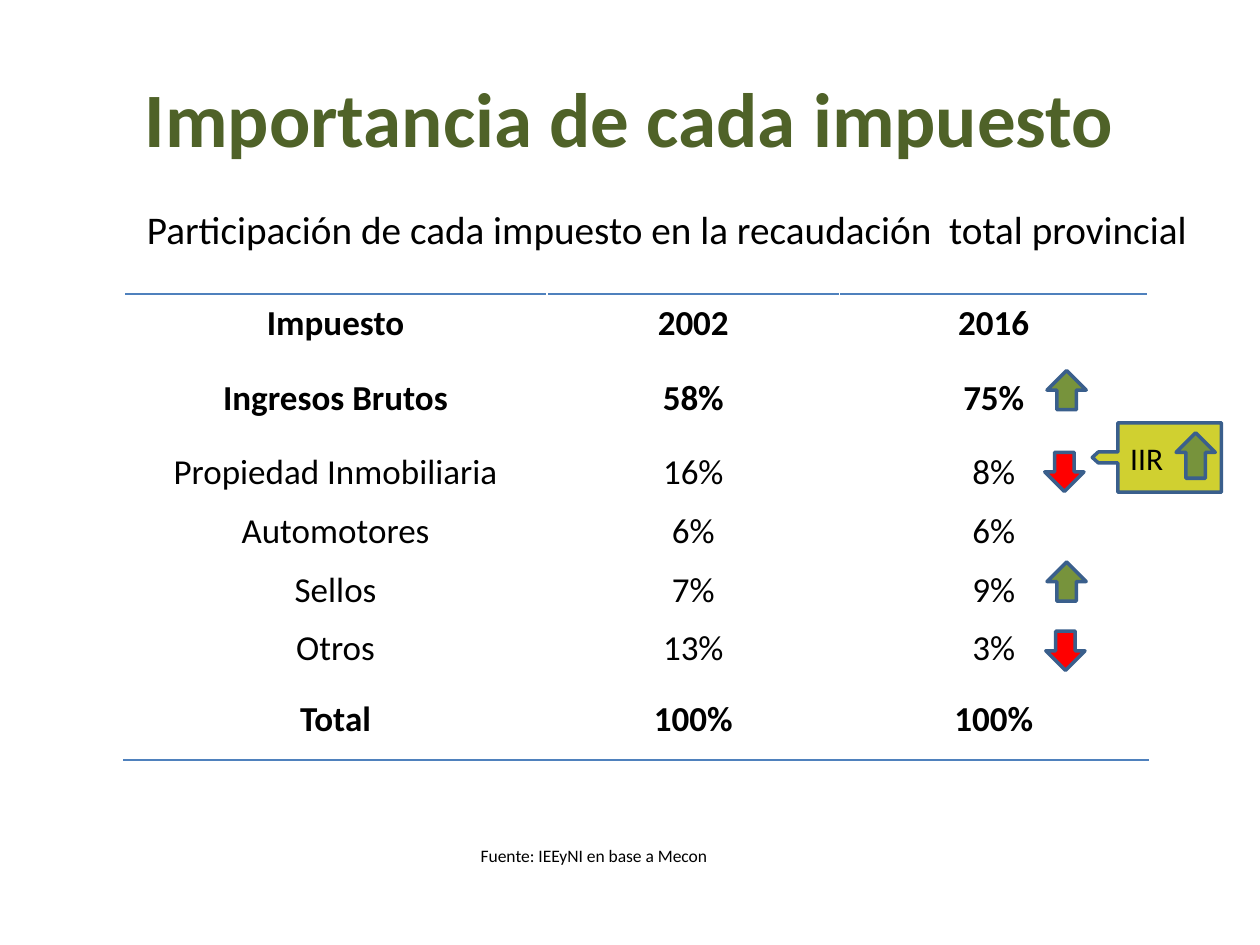
import pptx
import pptx.dml.color
import pptx.enum.shapes
import pptx.enum.text
import pptx.oxml
import pptx.oxml.ns
import pptx.util

Pt = pptx.util.Pt
RGB = pptx.dml.color.RGBColor.from_string
SHAPE = pptx.enum.shapes.MSO_SHAPE
ALIGN = pptx.enum.text.PP_ALIGN
MIDDLE = pptx.enum.text.MSO_ANCHOR.MIDDLE
TOP = pptx.enum.text.MSO_ANCHOR.TOP


class Theme:
    font = "Calibri"
    text, title = "000000", "4F6228"
    rule, outline = "4F81BD", "3A5F8C"
    rise, fall, callout = "77933C", "FF0000", "D0D030"
    title_size, subtitle_size, table_size = 44, 22.4, 20
    callout_size, source_size = 18, 10


ROWS = [
    ("Impuesto", "2002", "2016"),
    ("Ingresos Brutos", "58%", "75%"),
    ("Propiedad Inmobiliaria", "16%", "8%"),
    ("Automotores", "6%", "6%"),
    ("Sellos", "7%", "9%"),
    ("Otros", "13%", "3%"),
    ("Total", "100%", "100%"),
]
BOLD_ROWS = {0, 1, 6}
COL_WIDTHS = (241.9, 167, 176.4)
ROW_HEIGHTS = (33.6, 51.4, 33.6, 33.6, 33.6, 33.6, 47)

# Arrows: left, top, width, height, rises
ARROWS = [
    (598.3, 211.7, 22.4, 22.4, True),
    (597, 258.5, 22.4, 22.4, False),
    (598.3, 321.1, 22.4, 22.4, True),
    (597.6, 360.7, 22.4, 22.4, False),
    (670.3, 249.1, 26, 22.4, True),
]


def write(tf, text, size, color=Theme.text, bold=False, align=ALIGN.CENTER):
    p = tf.paragraphs[0]
    p.alignment = align
    r = p.add_run()
    r.text = text
    r.font.name = Theme.font
    r.font.size = Pt(size)
    r.font.bold = bold
    r.font.color.rgb = RGB(color)


def add_text(s, box, text, size, anchor=MIDDLE, **style):
    tf = s.shapes.add_textbox(*map(Pt, box)).text_frame
    tf.word_wrap = True
    tf.vertical_anchor = anchor
    write(tf, text, size, **style)


def add_shape(s, kind, box, fill):
    sp = s.shapes.add_shape(kind, *map(Pt, box))
    sp.shadow.inherit = False
    sp.fill.solid()
    sp.fill.fore_color.rgb = RGB(fill)
    sp.line.color.rgb = RGB(Theme.outline)
    sp.line.width = Pt(2)
    return sp


def add_arrow(s, left, top, width, height, rises):
    fill = Theme.rise if rises else Theme.fall
    sp = add_shape(s, SHAPE.RIGHT_ARROW, (left, top, width, height), fill)
    sp.rotation = 270 if rises else 90


def add_callout(s, box, text):
    sp = add_shape(s, SHAPE.LEFT_ARROW_CALLOUT, box, Theme.callout)
    for i, value in enumerate((0.158, 0.079, 0.087, 0.802)):
        sp.adjustments[i] = value
    sp.text_frame.vertical_anchor = MIDDLE
    write(sp.text_frame, text, Theme.callout_size, align=ALIGN.LEFT)


def add_rule(cell, side):
    ns = pptx.oxml.ns.nsdecls("a")
    line = pptx.oxml.parse_xml(
        f'<a:{side} {ns} w="{Pt(1)}"><a:solidFill>'
        f'<a:srgbClr val="{Theme.rule}"/></a:solidFill></a:{side}>')
    cell._tc.get_or_add_tcPr().insert(0, line)


def add_tax_table(s, left, top):
    size = map(Pt, (left, top, sum(COL_WIDTHS), sum(ROW_HEIGHTS)))
    table = s.shapes.add_table(len(ROWS), len(COL_WIDTHS), *size).table
    table.first_row = table.horz_banding = False
    for column, width in zip(table.columns, COL_WIDTHS):
        column.width = Pt(width)
    for i, values in enumerate(ROWS):
        table.rows[i].height = Pt(ROW_HEIGHTS[i])
        for j, value in enumerate(values):
            cell = table.cell(i, j)
            cell.fill.background()
            cell.vertical_anchor = MIDDLE
            cell.margin_left = cell.margin_right = Pt(1.4)
            cell.margin_top, cell.margin_bottom = Pt(0.7), 0
            write(cell.text_frame, value, Theme.table_size, bold=i in BOLD_ROWS)
            # Rules only above the header and below the total
            if i == 0:
                add_rule(cell, "lnT")
            elif i == len(ROWS) - 1:
                add_rule(cell, "lnB")


def main():
    prs = pptx.Presentation()
    prs.slide_width, prs.slide_height = Pt(720), Pt(540)
    s = prs.slides.add_slide(prs.slide_layouts[6])

    # Headings
    add_text(s, (36, 21.6, 648, 90), "Importancia de cada impuesto",
             Theme.title_size, color=Theme.title, bold=True)
    add_text(s, (65.5, 105.8, 632.2, 50.4),
             "Participación de cada impuesto en la recaudación  total provincial",
             Theme.subtitle_size)

    # Table and source
    add_tax_table(s, 70.8, 167.9)
    add_text(s, (195.8, 479.5, 289.4, 19.4), "Fuente: IEEyNI en base a Mecon ",
             Theme.source_size, anchor=TOP)

    # Trend marks, with the callout beneath its arrow
    add_callout(s, (624.2, 241.6, 73.8, 39.6), "IIR")
    for arrow in ARROWS:
        add_arrow(s, *arrow)

    prs.save("out.pptx")


if __name__ == "__main__":
    main()
